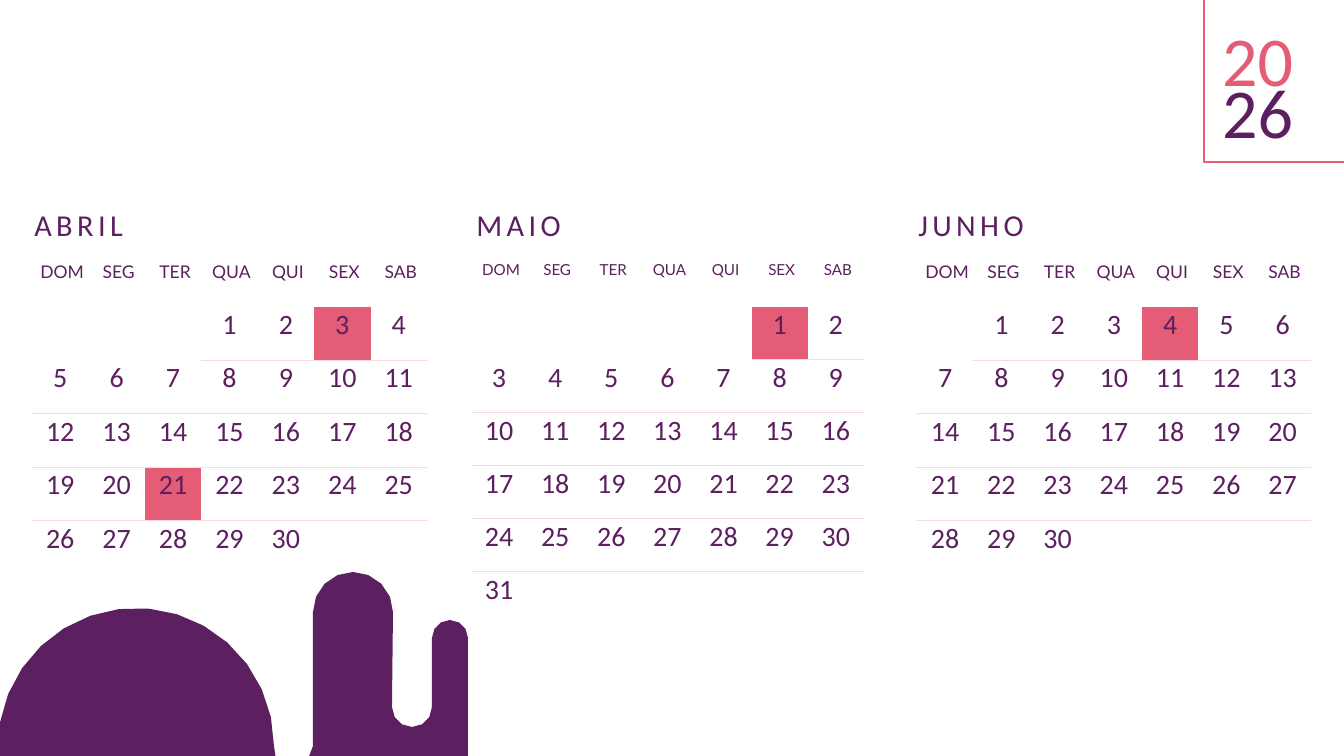
"""Build the April to June 2026 calendar slide."""
from math import cos, radians, sin

from lxml import etree
from pptx import Presentation
from pptx.dml.color import RGBColor
from pptx.enum.shapes import MSO_SHAPE
from pptx.enum.text import MSO_AUTO_SIZE, PP_ALIGN
from pptx.oxml.ns import qn
from pptx.util import Pt

RECTANGLE = MSO_SHAPE.RECTANGLE
FIT_SHAPE = MSO_AUTO_SIZE.SHAPE_TO_FIT_TEXT
CENTER = PP_ALIGN.CENTER

PURPLE = RGBColor(0x5C, 0x1F, 0x5F)
PINK = RGBColor(0xE4, 0x5C, 0x75)
PALE_PINK = RGBColor(0xF6, 0xDB, 0xDC)

BODY_FONT = "Calibri"
HEADER_FONT = "Lato"
EMU_PER_PX = 914400 / 84
WEEKDAYS = ["DOM", "SEG", "TER", "QUA", "QUI", "SEX", "SAB"]
TITLE_TOP = 202
TABLE_TOP = 260
HEADER_HEIGHT = 47

# title, title left, table left, width, height, header size, first weekday, days, holidays
MONTHS = [
    ("ABRIL", 26, 32, 395, 314, 15, 3, 30, {3, 21}),
    ("MAIO", 468, 471, 393, 365, 13, 5, 31, {1}),
    ("JUNHO", 910, 917, 394, 314, 15, 1, 30, {4}),
]


def px(value):
    return round(value * EMU_PER_PX)


def add_run(p, text, size, color, font=BODY_FONT):
    r = p.add_run()
    r.text = text
    r.font.size = Pt(size)
    r.font.name = font
    r.font.color.rgb = color
    return r


def add_text_frame(s, left, top, width, height, wrap):
    tf = s.shapes.add_textbox(px(left), px(top), px(width), px(height)).text_frame
    tf.word_wrap = wrap
    tf.auto_size = FIT_SHAPE
    return tf


def add_title(s, text, left):
    tf = add_text_frame(s, left, TITLE_TOP, 247, 45, True)
    r = add_run(tf.paragraphs[0], text, 26, PURPLE)
    r.font._element.set("spc", "380")


def add_year(s):
    tf = add_text_frame(s, 1214, 41, 101, 119, False)
    for p, text, color in ((tf.paragraphs[0], "20", PINK),
                           (tf.add_paragraph(), "26", PURPLE)):
        p.line_spacing = 0.62
        add_run(p, text, 60, color)
    sp = s.shapes.add_shape(RECTANGLE, px(1204), px(-29), px(174), px(191))
    sp.shadow.inherit = False
    sp.fill.background()
    sp.line.color.rgb = PINK
    sp.line.width = Pt(1.5)


def set_borders(cell, ruled):
    tcPr = cell._tc.get_or_add_tcPr()
    for i, side in enumerate(("lnL", "lnR", "lnT", "lnB")):
        ln = etree.Element(qn(f"a:{side}"), w=str(Pt(1)))
        if side in ruled:
            fill = etree.SubElement(ln, qn("a:solidFill"))
            etree.SubElement(fill, qn("a:srgbClr"), val=str(PALE_PINK))
        else:
            etree.SubElement(ln, qn("a:noFill"))
        tcPr.insert(i, ln)


def fill_cell(cell, text, size, font, margin_right, highlighted, ruled):
    cell.margin_left = px(4)
    cell.margin_right = px(margin_right)
    cell.margin_top = cell.margin_bottom = px(1)
    if highlighted:
        cell.fill.solid()
        cell.fill.fore_color.rgb = PINK
    else:
        cell.fill.background()
    set_borders(cell, ruled)
    if text:
        p = cell.text_frame.paragraphs[0]
        p.alignment = CENTER
        add_run(p, text, size, PURPLE, font)


def add_month(s, left, width, height, header_size, first, days, holidays):
    columns = len(WEEKDAYS)
    weeks = -(-(first + days) // columns)
    table = s.shapes.add_table(weeks + 1, columns, px(left), px(TABLE_TOP),
                               px(width), px(height)).table
    table.first_row = table.horz_banding = False
    for column in table.columns:
        column.width = px(width / columns)
    for row in table.rows:
        row.height = px((height - HEADER_HEIGHT) / weeks)
    table.rows[0].height = px(HEADER_HEIGHT)

    for col, weekday in enumerate(WEEKDAYS):
        fill_cell(table.cell(0, col), weekday, header_size, HEADER_FONT, 0, False, ())
        for week in range(weeks):
            day = week * columns + col - first + 1
            ruled = set()
            if day > columns:
                ruled.add("lnT")
            if day > 0 and week < weeks - 1:
                ruled.add("lnB")
            text = str(day) if 1 <= day <= days else ""
            fill_cell(table.cell(week + 1, col), text, 24, BODY_FONT, 4,
                      day in holidays, ruled)


def arc(cx, cy, radius, start, end, steps):
    angles = [radians(start + (end - start) * i / steps) for i in range(steps + 1)]
    return [(cx + radius * cos(a), cy - radius * sin(a)) for a in angles]


def add_hills(s):
    dome = arc(136, 746, 138, 0, 170, 14) + [(0, 759), (276, 759)]
    columns = (
        [(308, 759), (313, 746)]
        + arc(353, 612, 40, 180, 0, 8)
        + arc(412, 707, 20, 180, 360, 6)
        + arc(450, 638, 18, 180, 0, 6)
        + [(468, 759)]
    )
    outlines = [[(px(x), px(y)) for x, y in points] for points in (dome, columns)]
    builder = s.shapes.build_freeform(*outlines[0][0])
    builder.add_line_segments(outlines[0][1:])
    builder.move_to(*outlines[1][0])
    builder.add_line_segments(outlines[1][1:])
    sp = builder.convert_to_shape()
    sp.shadow.inherit = False
    sp.fill.solid()
    sp.fill.fore_color.rgb = PURPLE
    sp.line.fill.background()


def main():
    prs = Presentation()
    prs.slide_width, prs.slide_height = px(1344), px(756)
    s = prs.slides.add_slide(prs.slide_layouts[6])
    for title, title_left, *_ in MONTHS:
        add_title(s, title, title_left)
    add_year(s)
    for _, _, *month in MONTHS:
        add_month(s, *month)
    add_hills(s)
    prs.save("out.pptx")


if __name__ == "__main__":
    main()
